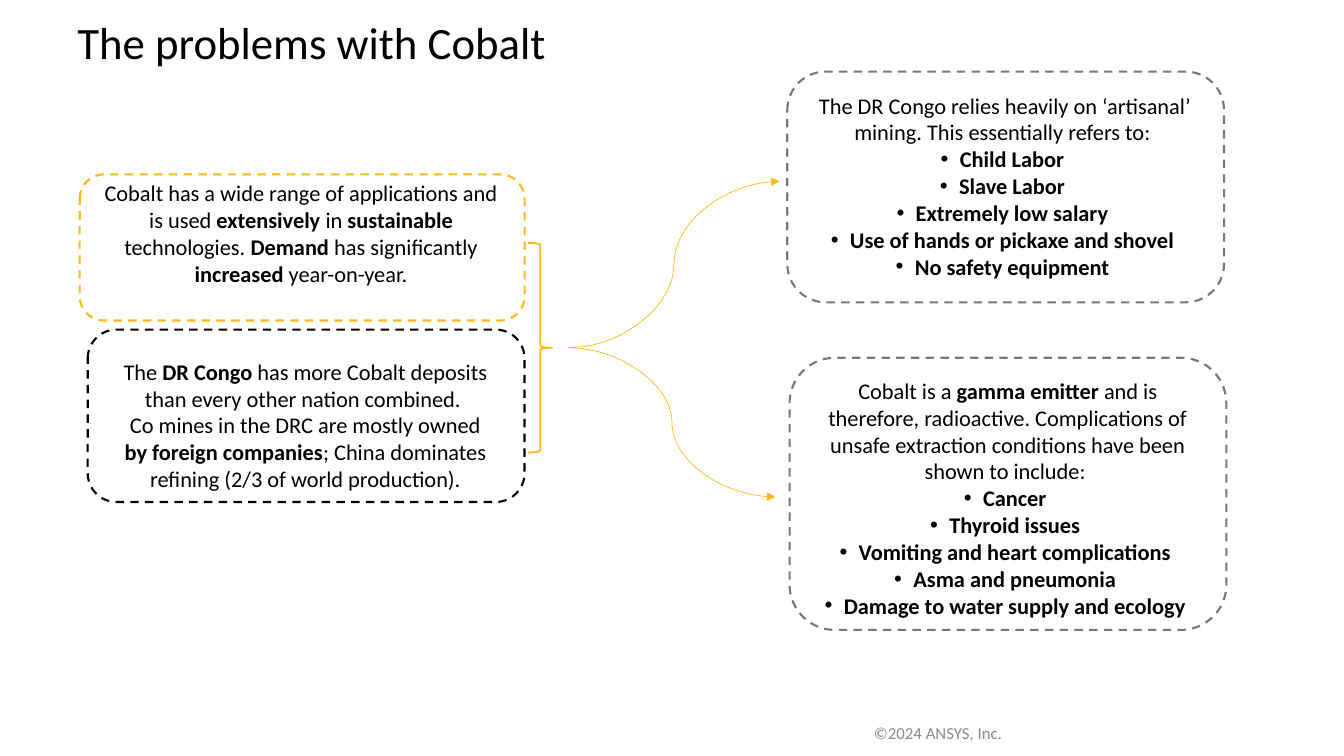
from lxml.etree import SubElement
from pptx import Presentation
from pptx.dml.color import RGBColor
from pptx.enum.dml import MSO_LINE
from pptx.enum.shapes import MSO_CONNECTOR, MSO_SHAPE
from pptx.enum.text import MSO_ANCHOR, MSO_AUTO_SIZE, PP_ALIGN
from pptx.oxml.ns import qn
from pptx.util import Inches, Pt

WIDTH, HEIGHT = Inches(13.33), Inches(7.5)
FONT = "Calibri"
COLOURS = {"text": "000000", "paper": "FFFFFF", "amber": "FFB71B",
           "grey": "777777", "footer": "898A8D"}
BULLET_INDENT = Inches(0.19)

# Frame and text areas: left, top, width, height in percent of the slide.
# Bold words stand between double asterisks; bullets start with "• ".
CARDS = [
    dict(line="text", grouped=True,
         frame=(6.53, 43.6, 32.5, 22.8), area=(7.95, 46.67, 29.55, 19.33),
         lines=["The **DR Congo **has more Cobalt deposits than every other "
                "nation combined. ",
                "Co mines in the DRC are mostly owned **by foreign companies**"
                "; China dominates refining (2/3 of world production)."]),
    dict(line="grey", grouped=False,
         frame=(58.58, 9.47, 32.5, 30.53), area=(60, 11.47, 29.55, 26.53),
         lines=["The DR Congo relies heavily on ‘artisanal’ mining. "
                "This essentially refers to: ",
                "• **Child Labor ",
                "• **Slave Labor ",
                "• **Extremely low salary ",
                "• **Use of hands or pickaxe and shovel ",
                "• **No safety equipment "]),
    dict(line="grey", grouped=False,
         frame=(58.75, 47.33, 32.5, 36), area=(60.2, 49.2, 29.55, 36.4),
         lines=["Cobalt is a **gamma emitter **and is therefore, radioactive. "
                "Complications of unsafe extraction conditions have been "
                "shown to include: ",
                "• **Cancer ",
                "• **Thyroid issues ",
                "• **Vomiting and heart complications ",
                "• **Asma and pneumonia ",
                "• **Damage to water supply and ecology "]),
    dict(line="amber", grouped=True,
         frame=(5.93, 23.07, 33.1, 19.33), area=(6.9, 23.07, 31, 15.73),
         lines=["Cobalt has a wide range of applications and is used "
                "**extensively** in **sustainable** technologies. **Demand** "
                "has significantly **increased** year-on-year."]),
]
BRACE = (39.3, 32.13, 1.8, 27.73)
ARROW_START = (42.3, 46)
ARROW_ENDS = [(58, 24), (57.7, 65.73)]


def colour(name):
    return RGBColor.from_string(COLOURS[name])


def across(share):
    return round(WIDTH * share / 100)


def down(share):
    return round(HEIGHT * share / 100)


def place(left, top, width, height):
    return across(left), down(top), across(width), down(height)


def add_span(para, text, size, shade="text", bold=False):
    span = para.add_run()
    span.text = text
    span.font.name, span.font.size, span.font.bold = FONT, Pt(size), bold
    span.font.color.rgb = colour(shade)


def add_bullet(para):
    properties = para._p.get_or_add_pPr()
    properties.set("marL", str(BULLET_INDENT))
    properties.set("indent", str(-BULLET_INDENT))
    SubElement(properties, qn("a:buFont")).set("typeface", "Arial")
    SubElement(properties, qn("a:buChar")).set("char", "•")


def add_text_box(shapes, area):
    box = shapes.add_textbox(*place(*area))
    box.text_frame.word_wrap = True
    return box.text_frame


def add_outline(shapes, preset, area, shade, weight):
    shape = shapes.add_shape(preset, *place(*area))
    shape.shadow.inherit = False
    shape.fill.background()
    shape.line.color.rgb = colour(shade)
    shape.line.width = Pt(weight)
    return shape


def add_card(page, line, grouped, frame, area, lines):
    shapes = page.shapes.add_group_shape().shapes if grouped else page.shapes
    card = add_outline(shapes, MSO_SHAPE.ROUNDED_RECTANGLE, frame, line, 1.5)
    card.fill.solid()
    card.fill.fore_color.rgb = colour("paper")
    card.line.dash_style = MSO_LINE.DASH
    text = add_text_box(shapes, area)
    for index, content in enumerate(lines):
        para = text.add_paragraph() if index else text.paragraphs[0]
        para.alignment = PP_ALIGN.CENTER
        if content.startswith("• "):
            add_bullet(para)
            content = content[2:]
        for part, words in enumerate(content.split("**")):
            if words:
                add_span(para, words, 16, bold=part % 2 == 1)


def add_curved_arrow(page, start, end):
    arrow = page.shapes.add_connector(
        MSO_CONNECTOR.CURVE, across(start[0]), down(start[1]),
        across(end[0]), down(end[1]))
    arrow.line.color.rgb = colour("amber")
    arrow.line.width = Pt(0.5)
    SubElement(arrow.line._get_or_add_ln(), qn("a:tailEnd")).set("type", "triangle")
    SubElement(arrow._element.spPr, qn("a:effectLst"))


def set_title(page, words):
    title = page.shapes.title
    title.left, title.top, title.width, title.height = place(5, 2.13, 90, 12.4)
    frame = title.text_frame
    frame.auto_size = MSO_AUTO_SIZE.NONE
    frame.vertical_anchor = MSO_ANCHOR.TOP
    para = frame.paragraphs[0]
    para.alignment = PP_ALIGN.LEFT
    para.line_spacing = 0.9
    add_span(para, words, 32)


def main():
    deck = Presentation()
    deck.slide_width, deck.slide_height = WIDTH, HEIGHT
    page = deck.slides.add_slide(deck.slide_layouts[5])

    # Copyright line and title
    footer = add_text_box(page.shapes, (64.29, 94.93, 11.25, 4))
    add_span(footer.paragraphs[0], "©2024 ANSYS, Inc.", 12, "footer")
    set_title(page, "The problems with Cobalt")

    # Causes on the left, consequences on the right
    for card in CARDS:
        add_card(page, **card)

    # Brace and arrows between them
    add_outline(page.shapes, MSO_SHAPE.RIGHT_BRACE, BRACE, "amber", 1.25)
    for end in ARROW_ENDS:
        add_curved_arrow(page, ARROW_START, end)

    deck.save("out.pptx")


if __name__ == "__main__":
    main()
